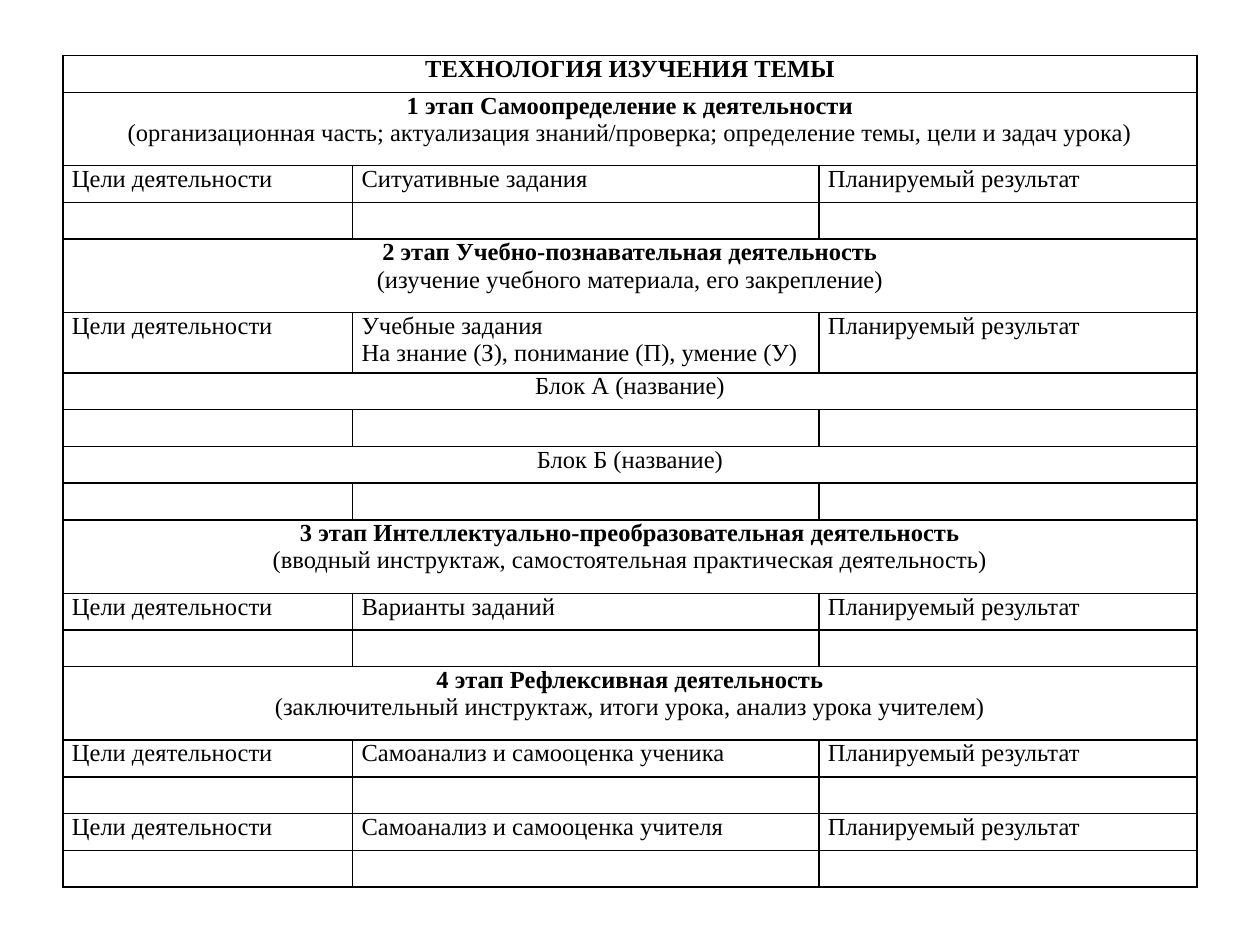
import lxml.etree
import pptx
import pptx.dml.color
import pptx.enum.text
import pptx.oxml.ns
import pptx.util

Cm = pptx.util.Cm
Pt = pptx.util.Pt
qn = pptx.oxml.ns.qn

COLORS = {"text": "000000", "border": "000000", "page": "FFFFFF"}
FONT = {"name": "Times New Roman", "size": Pt(14)}
CELL = {"margin_left": Cm(0.18), "margin_right": Cm(0.18), "margin_top": 0, "margin_bottom": 0}
ALIGN = pptx.enum.text.PP_ALIGN
COLUMN_WIDTHS = [5.84, 9.4, 7.62]
LINE_HEIGHT, STAGE_HEIGHT, TASK_HEIGHT = 0.74, 1.48, 1.22


def heading(text):
    return LINE_HEIGHT, [[(text, True)]]


def stage(title, details):
    return STAGE_HEIGHT, [[(title, True), (details, False)]]


def block(name):
    return LINE_HEIGHT, [[(name, False)]]


def columns(*tasks):
    height = LINE_HEIGHT if len(tasks) == 1 else TASK_HEIGHT
    return height, [
        [("Цели деятельности", False)],
        [(task, False) for task in tasks],
        [("Планируемый результат", False)],
    ]


BLANK = (LINE_HEIGHT, [[], [], []])

ROWS = [
    heading("ТЕХНОЛОГИЯ ИЗУЧЕНИЯ ТЕМЫ"),
    stage(
        "1 этап Самоопределение к деятельности",
        "(организационная часть; актуализация знаний/проверка; определение темы, цели и задач урока)",
    ),
    columns("Ситуативные задания"),
    BLANK,
    stage("2 этап Учебно-познавательная деятельность", "(изучение учебного материала, его закрепление)"),
    columns("Учебные задания", "На знание (З), понимание (П), умение (У)"),
    block("Блок А (название)"),
    BLANK,
    block("Блок Б (название)"),
    BLANK,
    stage(
        "3 этап Интеллектуально-преобразовательная деятельность",
        "(вводный инструктаж, самостоятельная практическая деятельность)",
    ),
    columns("Варианты заданий"),
    BLANK,
    stage("4 этап Рефлексивная деятельность", "(заключительный инструктаж, итоги урока, анализ урока учителем)"),
    columns("Самоанализ и самооценка ученика"),
    BLANK,
    columns("Самоанализ и самооценка учителя"),
    BLANK,
]


def apply_format(target, values):
    for name, value in values.items():
        setattr(target, name, value)


def format_cell(cell):
    apply_format(cell, CELL)
    properties = cell._tc.get_or_add_tcPr()
    for side in ("lnL", "lnR", "lnT", "lnB"):
        line = lxml.etree.SubElement(properties, qn(f"a:{side}"), w=str(Pt(1)))
        fill = lxml.etree.SubElement(line, qn("a:solidFill"))
        lxml.etree.SubElement(fill, qn("a:srgbClr"), val=COLORS["border"])
    cell.fill.solid()
    cell.fill.fore_color.rgb = pptx.dml.color.RGBColor.from_string(COLORS["page"])


def write_cell(cell, lines, alignment):
    frame = cell.text_frame
    if not lines:
        lxml.etree.SubElement(frame.paragraphs[0]._p, qn("a:endParaRPr"), sz="1400")
    for index, (text, bold) in enumerate(lines):
        paragraph = frame.add_paragraph() if index else frame.paragraphs[0]
        paragraph.alignment = alignment
        run = paragraph.add_run()
        run.text = text
        apply_format(run.font, {**FONT, "bold": bold})
        run.font.color.rgb = pptx.dml.color.RGBColor.from_string(COLORS["text"])


def add_lesson_table(slide, left, top, width, height):
    shape = slide.shapes.add_table(len(ROWS), len(COLUMN_WIDTHS), left, top, width, height)
    table = shape.table
    apply_format(table, {"first_row": False, "horz_banding": False})
    for column, share in zip(table.columns, COLUMN_WIDTHS):
        column.width = int(width * share / sum(COLUMN_WIDTHS))
    total_height = sum(row_height for row_height, _ in ROWS)
    for index, (row_height, contents) in enumerate(ROWS):
        table.rows[index].height = int(height * row_height / total_height)
        for cell in table.rows[index].cells:
            format_cell(cell)
        spans_row = len(contents) == 1
        if spans_row:
            table.cell(index, 0).merge(table.cell(index, len(COLUMN_WIDTHS) - 1))
        alignment = ALIGN.CENTER if spans_row else ALIGN.LEFT
        for column, lines in enumerate(contents):
            write_cell(table.cell(index, column), lines, alignment)


def main():
    presentation = pptx.Presentation()
    apply_format(presentation, {"slide_width": Cm(25.4), "slide_height": Cm(19.05)})
    slide = presentation.slides.add_slide(presentation.slide_layouts[6])
    add_lesson_table(slide, Cm(1.27), Cm(1.12), Cm(22.86), Cm(16.76))
    presentation.save("out.pptx")


if __name__ == "__main__":
    main()
